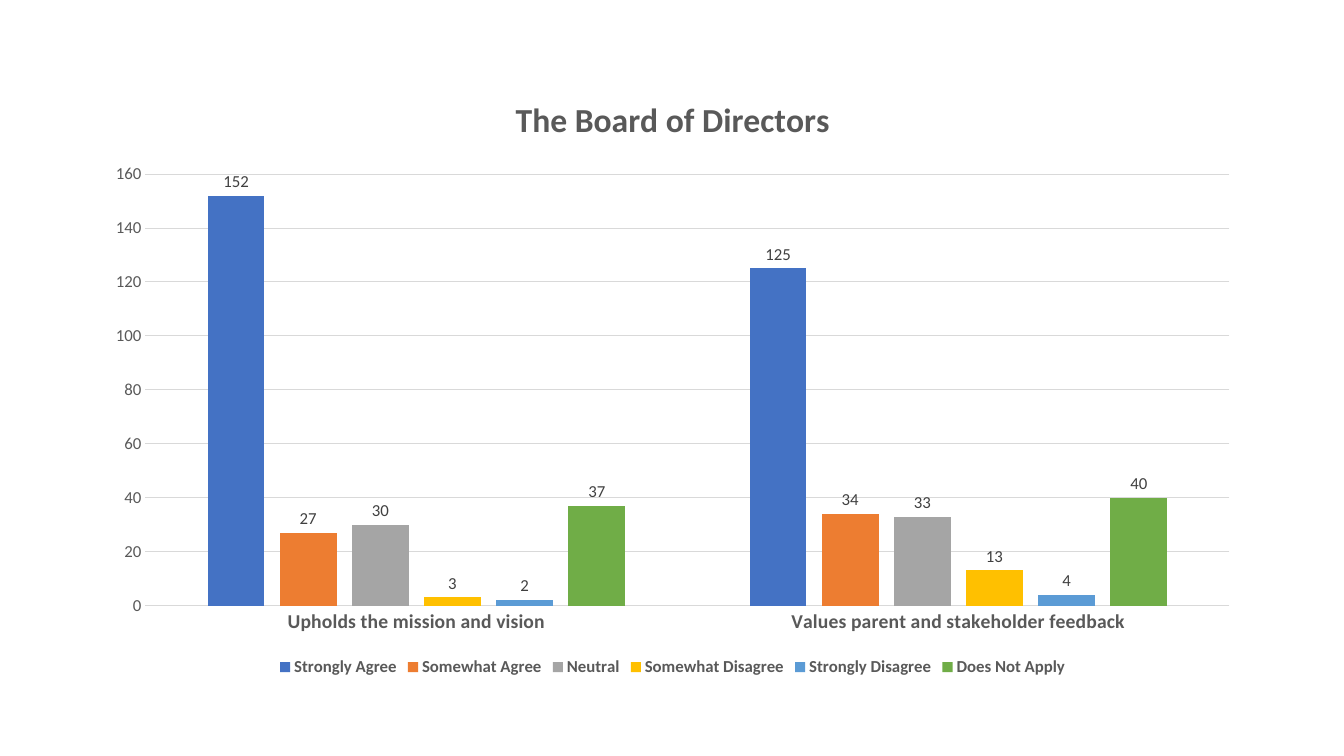
from dataclasses import dataclass

from pptx import Presentation
from pptx import util as u
from pptx.chart.data import CategoryChartData
from pptx.dml.color import RGBColor
from pptx.enum import chart as ch

WIDE, HIGH = u.Inches(13.33), u.Inches(7.5)
FACE = "Calibri"
HUES = {
    "blue": "4472C4", "orange": "ED7D31", "gray": "A5A5A5",
    "gold": "FFC000", "sky": "5B9BD5", "green": "70AD47",
    "text": "595959", "label": "404040", "rule": "D9D9D9",
}
TOPICS = ["Upholds the mission and vision",
          "Values parent and stakeholder feedback"]


@dataclass
class Answer:
    name: str
    votes: tuple[int, int]
    hue: str


ANSWERS = [
    Answer("Strongly Agree", (152, 125), "blue"),
    Answer("Somewhat Agree", (27, 34), "orange"),
    Answer("Neutral", (30, 33), "gray"),
    Answer("Somewhat Disagree", (3, 13), "gold"),
    Answer("Strongly Disagree", (2, 4), "sky"),
    Answer("Does Not Apply", (37, 40), "green"),
]


def color(hue: str) -> RGBColor:
    return RGBColor.from_string(HUES[hue])


def style(font, size: int = 12, bold: bool = False, hue: str = "text") -> None:
    font.name, font.size, font.bold = FACE, u.Pt(size), bold
    font.color.rgb = color(hue)


def write(frame, words: str, **look) -> None:
    """Put one formatted run of text into a text frame."""
    run = frame.paragraphs[0].add_run()
    run.text = words
    style(run.font, **look)


def rule(line) -> None:
    line.color.rgb = color("rule")
    line.width = u.Pt(0.75)


def add_plot(slide):
    data = CategoryChartData()
    data.categories = TOPICS
    for ans in ANSWERS:
        data.add_series(ans.name, ans.votes)
    box = [int(share * side) for share, side in
           ((0.069, WIDE), (0.097, HIGH), (0.863, WIDE), (0.804, HIGH))]
    return slide.shapes.add_chart(
        ch.XL_CHART_TYPE.COLUMN_CLUSTERED, *box, data).chart


def set_axes(chart) -> None:
    topics, votes = chart.category_axis, chart.value_axis
    for axis in (topics, votes):
        axis.major_tick_mark = axis.minor_tick_mark = ch.XL_TICK_MARK.NONE
    style(topics.tick_labels.font, size=14, bold=True)
    rule(topics.format.line)
    style(votes.tick_labels.font)
    votes.format.line.fill.background()
    votes.minimum_scale, votes.maximum_scale, votes.major_unit = 0, 160, 20
    rule(votes.major_gridlines.format.line)


def set_bars(plot) -> None:
    plot.gap_width, plot.overlap = 219, -27
    plot.vary_by_categories = False
    for bars, ans in zip(plot.series, ANSWERS):
        bars.invert_if_negative = False
        bars.format.fill.solid()
        bars.format.fill.fore_color.rgb = color(ans.hue)
        labels = bars.data_labels
        labels.show_value = True
        labels.position = ch.XL_LABEL_POSITION.OUTSIDE_END
        style(labels.font, hue="label")


def main() -> None:
    deck = Presentation()
    deck.slide_width, deck.slide_height = WIDE, HIGH
    slide = deck.slides.add_slide(deck.slide_layouts[6])
    chart = add_plot(slide)
    chart.font.name, chart.font.size = FACE, u.Pt(10)
    chart.has_title = True
    write(chart.chart_title.text_frame, "The Board of Directors",
          size=24, bold=True)
    chart.chart_title.include_in_layout = False
    chart.has_legend = True
    chart.legend.position = ch.XL_LEGEND_POSITION.BOTTOM
    chart.legend.include_in_layout = False
    style(chart.legend.font, bold=True)
    set_axes(chart)
    set_bars(chart.plots[0])
    deck.save("out.pptx")


if __name__ == "__main__":
    main()
